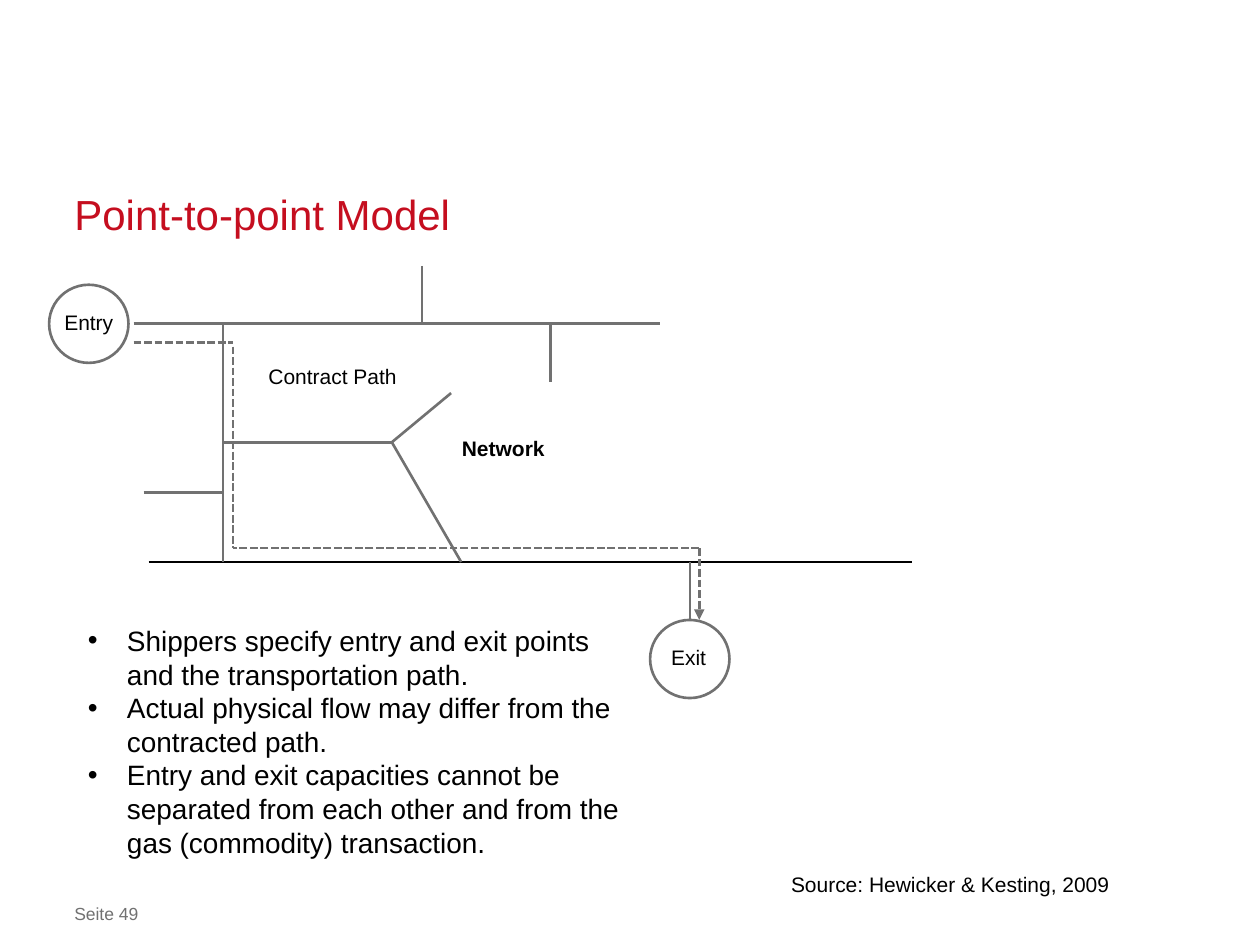
from pptx import Presentation, util as u
from pptx.dml.color import RGBColor
from pptx.enum import dml, shapes, text
from pptx.oxml.ns import qn
from lxml import etree

COLORS = {"red": "C50E1F", "grey": "717171", "black": "000000", "white": "FFFFFF"}
FONT = "Arial"

# Content
TITLE = "Point-to-point Model"
FOOTER = "Seite 49"
BULLETS = [
    "Shippers specify entry and exit points and the transportation path.",
    "Actual physical flow may differ from the contracted path.",
    "Entry and exit capacities cannot be separated from each other and from the "
    "gas (commodity) transaction.",
]
# Labels behind and in front of the network: text, box, format
BACK_LABELS = [
    ("Exit", (5.21, 5.07, 0.51, 0.3), {"align": "CENTER"}),
    ("Entry", (0.39, 2.41, 0.63, 0.31), {"align": "CENTER"}),
    ("Source: Hewicker & Kesting, 2009", (6.18, 6.87, 2.83, 0.3), {}),
]
FRONT_LABELS = [
    ("Network", (3.56, 3.41, 0.87, 0.3), {"align": "CENTER", "bold": True}),
    ("Contract Path", (1.97, 2.84, 1.34, 0.3), {"align": "CENTER"}),
]

# Network: main pipes, the link between them, and the fork
TOP, BOTTOM, LINK = 2.57, 4.46, 1.77
FORK = (3.11, 3.51)
BRANCH = 0.46
NODE = (0.63, 0.62)
ENTRY, EXIT = (0.39, 2.26), (5.16, BOTTOM + BRANCH)
EXIT_X = EXIT[0] + NODE[0] / 2
PIPES = [
    ((1.06, TOP), (5.24, TOP), "grey"),
    ((1.18, BOTTOM), (7.24, BOTTOM), "black"),
    ((LINK, TOP), (LINK, BOTTOM), "grey"),
    ((1.14, 3.91), (LINK, 3.91), "grey"),
    ((LINK, FORK[1]), FORK, "grey"),
    (FORK, (3.58, 3.12), "grey"),
    (FORK, (3.66, BOTTOM), "grey"),
    ((3.35, TOP - BRANCH), (3.35, TOP), "grey"),
    ((4.37, TOP), (4.37, TOP + BRANCH), "grey"),
]
# Contract path from entry to exit
PATH_X, PATH_Y, PATH_END = 1.85, 4.35, 5.55
PATH = [
    ((1.06, 2.72), (PATH_X, 2.72)),
    ((PATH_X, 2.75), (PATH_X, PATH_Y)),
    ((PATH_END, PATH_Y), (PATH_X, PATH_Y)),
    ((PATH_END, PATH_Y), (PATH_END, EXIT[1])),
]

prs = Presentation()
prs.slide_width, prs.slide_height = u.Inches(10), u.Inches(7.5)
s = prs.slides.add_slide(prs.slide_layouts[5])


def rgb(name):
    return RGBColor.from_string(COLORS[name])


def inches(values):
    return [u.Inches(v) for v in values]


def write(sp, paragraphs, size=12, color="black", bold=False, align="LEFT",
          bullet=False, inset=True, anchor="TOP", spacing=None):
    tf = sp.text_frame
    tf.word_wrap = True
    tf.auto_size = text.MSO_AUTO_SIZE.NONE
    tf.vertical_anchor = getattr(text.MSO_ANCHOR, anchor)
    if not inset:
        tf.margin_left = tf.margin_right = tf.margin_top = tf.margin_bottom = 0
    for i, words in enumerate(paragraphs):
        p = tf.add_paragraph() if i else tf.paragraphs[0]
        p.alignment = getattr(text.PP_ALIGN, align)
        if spacing:
            p.line_spacing = u.Pt(spacing)
        if bullet:
            pPr = p._p.get_or_add_pPr()
            pPr.set("marL", str(u.Inches(0.31)))
            pPr.set("indent", str(-u.Inches(0.31)))
            etree.SubElement(pPr, qn("a:buFont")).set("typeface", FONT)
            etree.SubElement(pPr, qn("a:buChar")).set("char", "•")
        r = p.add_run()
        r.text = words
        r.font.name, r.font.size, r.font.bold = FONT, u.Pt(size), bold
        r.font.color.rgb = rgb(color)


def add_text(box, paragraphs, fill=None, **fmt):
    sp = s.shapes.add_textbox(*inches(box))
    if fill:
        sp.fill.solid()
        sp.fill.fore_color.rgb = rgb(fill)
    write(sp, paragraphs, **fmt)


def add_line(start, end, color="grey", dashed=False):
    c = s.shapes.add_connector(shapes.MSO_CONNECTOR.STRAIGHT, *inches(start + end))
    c.line.color.rgb = rgb(color)
    c.line.width = u.Pt(1.5)
    if dashed:
        c.line.dash_style = dml.MSO_LINE.SQUARE_DOT
    etree.SubElement(c._element.spPr, qn("a:effectLst"))
    return c


def add_node(position):
    sp = s.shapes.add_shape(shapes.MSO_SHAPE.OVAL, *inches(position + NODE))
    sp.shadow.inherit = False
    sp.fill.background()
    sp.line.color.rgb = rgb("grey")
    sp.line.width = u.Pt(1.5)
    return sp


# Title and footer
title = s.shapes.title
title.left, title.top, title.width, title.height = inches((0.59, 1.51, 8.82, 0.39))
write(title, [TITLE], size=24, color="red", inset=False, anchor="BOTTOM", spacing=30)
add_text((0.59, 7.17, 7.24, 0.17), [FOOTER], size=10, color="grey", inset=False)

# Network with its labels
for words, box, fmt in BACK_LABELS:
    add_text(box, [words], fill="white", **fmt)
for start, end, color in PIPES:
    add_line(start, end, color)
exit_pipe = add_line((EXIT_X, BOTTOM), (EXIT_X, EXIT[1]))
add_node(ENTRY)
exit_pipe.end_connect(add_node(EXIT), 0)
for words, box, fmt in FRONT_LABELS:
    add_text(box, [words], fill="white", **fmt)

# Contract path, its last leg ending in an arrowhead
legs = [add_line(start, end, dashed=True) for start, end in PATH]
etree.SubElement(legs[-1].line._get_or_add_ln(), qn("a:tailEnd")).set("type", "triangle")

# Explanation
add_text((0.6, 4.9, 4.57, 1.99), BULLETS, size=16, bullet=True)

prs.save("out.pptx")
